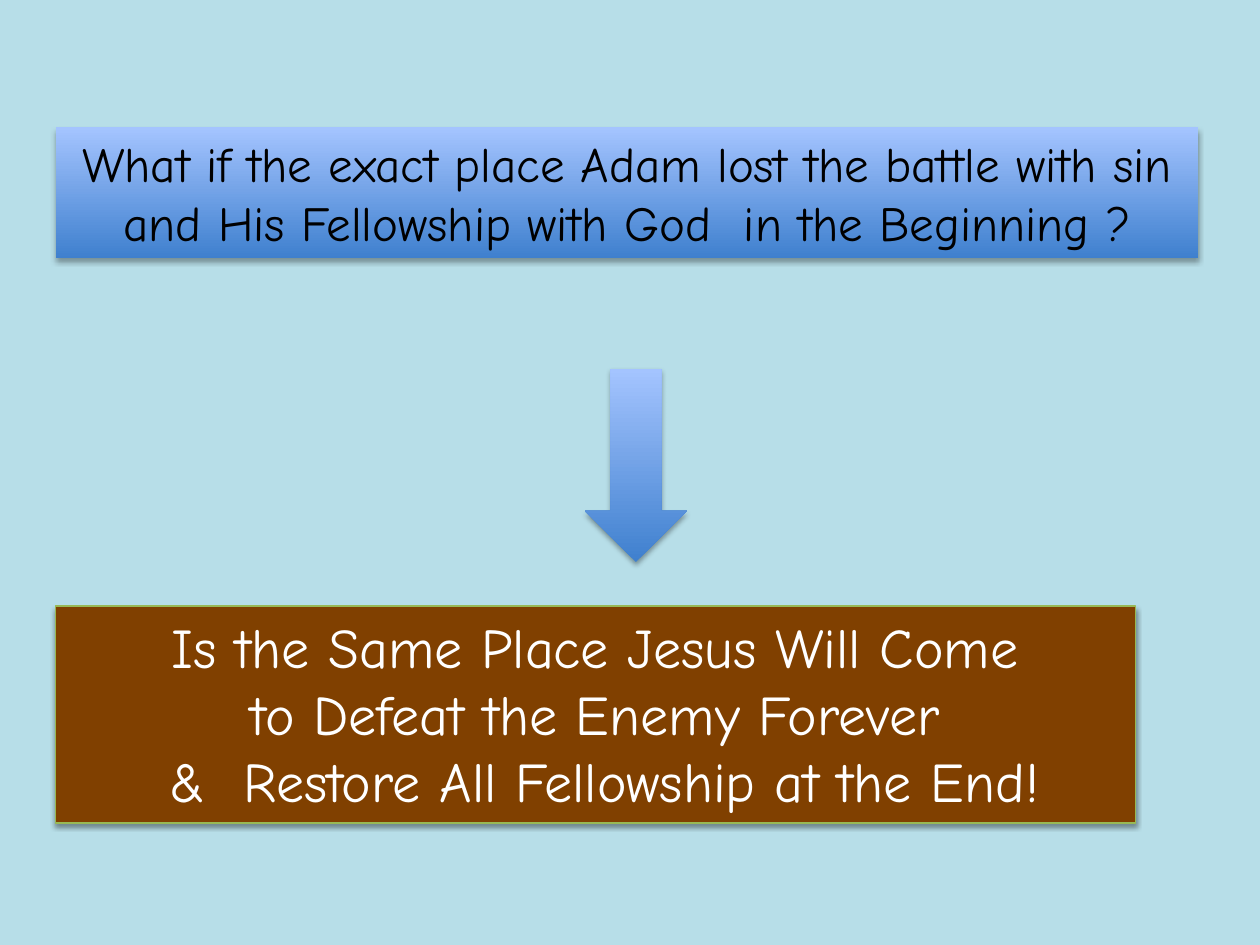
from lxml import etree
from pptx import Presentation
from pptx.dml.color import RGBColor
from pptx.enum.shapes import MSO_SHAPE
from pptx.enum.text import MSO_ANCHOR, MSO_AUTO_SIZE, PP_ALIGN
from pptx.oxml.ns import qn
from pptx.util import Cm, Pt

WIDTH, HEIGHT = 25.4, 19.05
LEFT = 1.12
FONT = "Comic Neue"
SKY, BROWN, GREEN = "B7DEE8", "804000", "98B955"
DEEP_BLUE, PALE_BLUE = "3F80CE", "A4C4FF"
BLACK, WHITE = "000000", "FFFFFF"


def color(hex_value):
    return RGBColor.from_string(hex_value)


def add_block(slide, kind, box):
    """Add a preset shape without outline or shadow; box is in cm."""
    block = slide.shapes.add_shape(kind, *(Cm(length) for length in box))
    block.shadow.inherit = False
    block.line.fill.background()
    return block


def fill_solid(block, hex_value):
    block.fill.solid()
    block.fill.fore_color.rgb = color(hex_value)


def fill_blue_gradient(block):
    """Shade from deep blue at the bottom to pale blue at the top."""
    block.fill.gradient()
    block.fill.gradient_angle = 90
    for stop, shade, position in zip(
            block.fill.gradient_stops, (DEEP_BLUE, PALE_BLUE), (0, 1)):
        stop.color.rgb = color(shade)
        stop.position = position


def drop_shadow(block, distance, opacity):
    """Cast a soft shadow straight down; distance in points, opacity in %."""
    effects = block._element.spPr.find(qn("a:effectLst"))
    shadow = etree.SubElement(
        effects, qn("a:outerShdw"), blurRad=str(Pt(3.1)),
        dist=str(Pt(distance)), dir="5400000", rotWithShape="0")
    tint = etree.SubElement(shadow, qn("a:srgbClr"), val=BLACK)
    etree.SubElement(tint, qn("a:alpha"), val=str(opacity * 1000))


def write_lines(block, lines, size, hex_value):
    frame = block.text_frame
    frame.word_wrap = True
    frame.auto_size = MSO_AUTO_SIZE.SHAPE_TO_FIT_TEXT
    frame.vertical_anchor = MSO_ANCHOR.TOP
    frame.text = "\n".join(lines)
    for paragraph in frame.paragraphs:
        paragraph.alignment = PP_ALIGN.CENTER
        paragraph.font.name = FONT
        paragraph.font.size = Pt(size)
        paragraph.font.color.rgb = color(hex_value)


def add_backdrop(slide, box):
    fill_solid(add_block(slide, MSO_SHAPE.RECTANGLE, box), SKY)


def add_question(slide, box):
    question = add_block(slide, MSO_SHAPE.RECTANGLE, box)
    fill_blue_gradient(question)
    drop_shadow(question, 1.8, 35)
    write_lines(question, [
        "What if the exact place Adam lost the battle with sin "
        "and His Fellowship with God  in the Beginning ?"], 28, BLACK)


def add_arrow(slide, box):
    arrow = add_block(slide, MSO_SHAPE.DOWN_ARROW, box)
    fill_blue_gradient(arrow)
    drop_shadow(arrow, 1.8, 35)


def add_answer(slide, box):
    answer = add_block(slide, MSO_SHAPE.RECTANGLE, box)
    fill_solid(answer, BROWN)
    answer.line.color.rgb = color(GREEN)
    answer.line.width = Pt(0.75)
    drop_shadow(answer, 1.6, 38)
    write_lines(answer, [
        "Is the Same Place Jesus Will Come",
        " to Defeat the Enemy Forever ",
        " &  Restore All Fellowship at the End!"], 32, WHITE)


def main():
    deck = Presentation()
    deck.slide_width, deck.slide_height = Cm(WIDTH), Cm(HEIGHT)
    slide = deck.slides.add_slide(deck.slide_layouts[6])

    # Background, then question, arrow and answer from top to bottom
    add_backdrop(slide, (0, 0, WIDTH, HEIGHT))
    add_question(slide, (LEFT, 2.57, 23.04, 2.64))
    add_arrow(slide, (11.79, 7.44, 2.06, 3.89))
    add_answer(slide, (LEFT, 12.22, 21.77, 4.37))

    deck.save("out.pptx")


if __name__ == "__main__":
    main()
